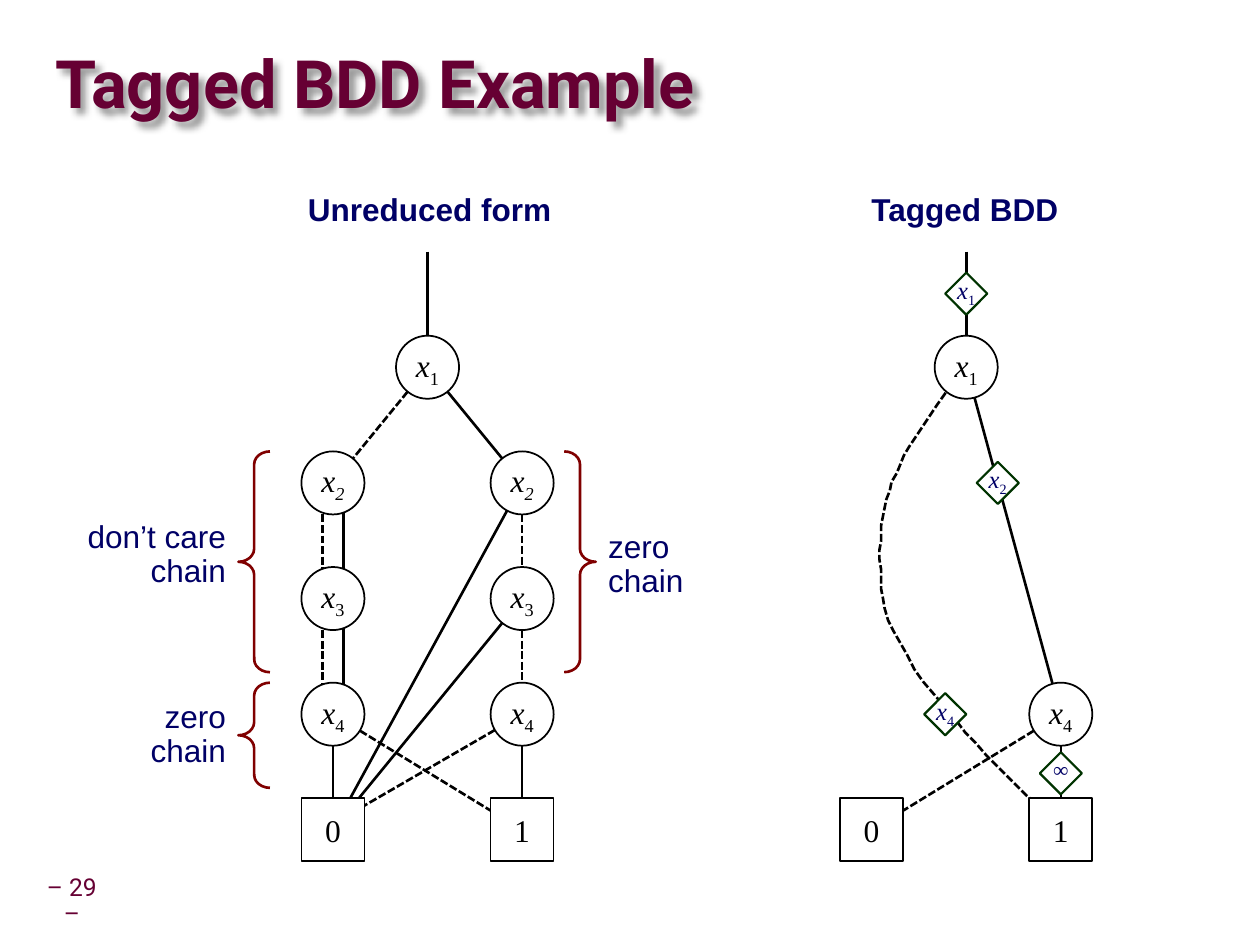
import lxml.etree
import pptx
import pptx.dml.color
import pptx.enum.dml
import pptx.enum.shapes
import pptx.enum.text
import pptx.oxml
import pptx.oxml.ns
import pptx.util

Pt = pptx.util.Pt
SHAPE = pptx.enum.shapes.MSO_SHAPE
ALIGN = pptx.enum.text.PP_ALIGN
MIDDLE = pptx.enum.text.MSO_ANCHOR.MIDDLE
TOP = pptx.enum.text.MSO_ANCHOR.TOP

COLORS = {
    "white": "FFFFFF",
    "black": "000000",
    "navy": "000066",
    "maroon": "660033",
    "brace": "800000",
    "tag": "003300",
}
NODE_FONT = {"name": "Times New Roman", "size": Pt(18)}
TAG_FONT = {"name": "Times New Roman", "size": Pt(14)}
LABEL_FONT = {"name": "Arial", "size": Pt(18)}
HEADING_FONT = {**LABEL_FONT, "bold": True}
TITLE_FONT = {"name": "Roboto", "size": Pt(38), "bold": True}
NUMBER_FONT = {"name": "Roboto", "size": Pt(14)}

NODE_SIZE, TAG_SIZE = 36, 24
LEVELS = [209.6 + 66 * level for level in range(5)]
X1, X2, X3, X4, LEAF = LEVELS
ROOT_TOP = 143.6


def rgb(color):
    return pptx.dml.color.RGBColor.from_string(COLORS[color])


def set_values(target, values):
    for name, value in values.items():
        setattr(target, name, value)


def bezier(start, first, second, end, steps=24):
    for step in range(1, steps + 1):
        t = step / steps
        weights = ((1 - t) ** 3, 3 * t * (1 - t) ** 2, 3 * t * t * (1 - t), t ** 3)
        corners = (start, first, second, end)
        yield tuple(round(sum(w * c[axis] for w, c in zip(weights, corners)), 2)
                    for axis in (0, 1))


class DiagramSlide:
    def __init__(self, slide):
        self.slide = slide

    def style_line(self, line, color="black", width=1.5, dashed=False):
        line.color.rgb = rgb(color)
        line.width = Pt(width)
        if dashed:
            line.dash_style = pptx.enum.dml.MSO_LINE.SQUARE_DOT

    def add_lines(self, shape, lines, font, color, align, spacing=0.9, frame=None):
        text_frame = shape.text_frame
        set_values(text_frame, {"word_wrap": False, **(frame or {})})
        for index, parts in enumerate(lines):
            paragraph = text_frame.paragraphs[0] if index == 0 else text_frame.add_paragraph()
            set_values(paragraph, {"alignment": align, "line_spacing": spacing})
            for text, italic, subscript in parts:
                run = paragraph.add_run()
                run.text = text
                set_values(run.font, {**font, "italic": italic})
                run.font.color.rgb = rgb(color)
                if subscript:
                    run._r.get_or_add_rPr().set("baseline", "-25000")

    def text(self, left, top, width, height, lines, font, color="navy",
             align=ALIGN.CENTER, spacing=0.9, **frame):
        shape = self.slide.shapes.add_textbox(Pt(left), Pt(top), Pt(width), Pt(height))
        parts = [[(line, False, False)] for line in lines]
        self.add_lines(shape, parts, font, color, align, spacing, {"vertical_anchor": TOP, **frame})
        return shape

    def title(self, text):
        shape = self.text(31.7, 19.4, 685.4, 61.2, [text], TITLE_FONT, "maroon", ALIGN.LEFT, 0.87,
                          vertical_anchor=MIDDLE, margin_left=0, margin_right=0,
                          margin_top=0, margin_bottom=0, word_wrap=True)
        shape._element.spPr.append(pptx.oxml.parse_xml(
            '<a:effectLst %s><a:outerShdw blurRad="50800" dist="53900" dir="2700000" algn="tl">'
            '<a:srgbClr val="%s"><a:alpha val="40000"/></a:srgbClr></a:outerShdw></a:effectLst>'
            % (pptx.oxml.ns.nsdecls("a"), COLORS["black"])))

    def edge(self, start, end, dashed=False):
        connector = self.slide.shapes.add_connector(
            pptx.enum.shapes.MSO_CONNECTOR.STRAIGHT, *(Pt(value) for value in (*start, *end)))
        self.style_line(connector.line, dashed=dashed)
        lxml.etree.SubElement(connector._element.spPr, pptx.oxml.ns.qn("a:effectLst"))

    def curve(self, start, *segments):
        points, current = [], start
        for segment in segments:
            points.extend(bezier(current, *segment))
            current = segment[-1]
        builder = self.slide.shapes.build_freeform(*start, scale=Pt(1))
        builder.add_line_segments(points, close=False)
        shape = builder.convert_to_shape()
        shape.shadow.inherit = False
        shape.fill.background()
        self.style_line(shape.line, dashed=True)

    def box(self, kind, center, size, line_color, line_width, parts, font, color, spacing, **frame):
        x, y = center
        shape = self.slide.shapes.add_shape(
            kind, Pt(x - size / 2), Pt(y - size / 2), Pt(size), Pt(size))
        shape.shadow.inherit = False
        shape.fill.solid()
        shape.fill.fore_color.rgb = rgb("white")
        self.style_line(shape.line, line_color, line_width)
        self.add_lines(shape, [parts], font, color, ALIGN.CENTER, spacing,
                       {"vertical_anchor": MIDDLE, "margin_left": 0, "margin_right": 0, **frame})

    def node(self, x, y, index, italic_index=False):
        self.box(SHAPE.OVAL, (x, y), NODE_SIZE, "black", 1,
                 [("x", True, False), (index, italic_index, True)], NODE_FONT, "black", 1.0)

    def leaf(self, x, value):
        self.box(SHAPE.RECTANGLE, (x, LEAF), NODE_SIZE, "black", 1,
                 [(value, False, False)], NODE_FONT, "black", 1.0)

    def tag(self, x, y, index):
        if index == "∞":
            parts, font = [(index, True, False)], {**TAG_FONT, "size": Pt(12)}
        else:
            parts, font = [("x", True, False), (index, False, True)], TAG_FONT
        self.box(SHAPE.DIAMOND, (x, y), TAG_SIZE, "tag", 1.25, parts, font, "navy", 0.9,
                 margin_top=0, margin_bottom=Pt(3.6))

    def brace(self, kind, left, top, height):
        shape = self.slide.shapes.add_shape(kind, Pt(left), Pt(top), Pt(18), Pt(height))
        shape.shadow.inherit = False
        shape.adjustments[0] = 0.41
        shape.fill.background()
        self.style_line(shape.line, "brace")


def draw_unreduced(diagram):
    left, middle, right = 190.1, 244.1, 298.1
    for start, end, dashed in [
        ((middle, ROOT_TOP), (middle, X1), False),
        ((middle, X1), (left, X2), True),
        ((middle, X1), (right, X2), False),
        ((left - 6, X2), (left - 6, X4), True),
        ((left + 6, X2), (left + 6, X4), False),
        ((right, X2), (right, X4), True),
        ((right, X2), (left, LEAF), False),
        ((right, X3), (left, LEAF), False),
        ((left, X4), (left, LEAF), False),
        ((left, X4), (right, LEAF), True),
        ((right, X4), (left - 6, LEAF), True),
        ((right, X4), (right, LEAF), False),
    ]:
        diagram.edge(start, end, dashed)
    diagram.node(middle, X1, "1")
    for x, value in ((left, "0"), (right, "1")):
        for y, index in ((X2, "2"), (X3, "3"), (X4, "4")):
            diagram.node(x, y, index, italic_index=index == "2")
        diagram.leaf(x, value)
    diagram.brace(SHAPE.RIGHT_BRACE, 322.1, 257.6, 126)
    diagram.brace(SHAPE.LEFT_BRACE, 136.1, 257.6, 126)
    diagram.brace(SHAPE.LEFT_BRACE, 136.1, 389.6, 60)
    diagram.text(340.1, 299.6, 58.3, 46.8, ["zero", "chain"], LABEL_FONT, align=ALIGN.LEFT)
    diagram.text(41.8, 293.8, 94.3, 46.8, ["don’t care", "chain"], LABEL_FONT, align=ALIGN.RIGHT)
    diagram.text(77.8, 396.7, 58.3, 46.8, ["zero", "chain"], LABEL_FONT, align=ALIGN.RIGHT)
    diagram.text(167.8, 107.3, 154.8, 27.4, ["Unreduced form"], HEADING_FONT)


def draw_tagged(diagram):
    left, middle, right = 497.6, 551.6, 605.6
    diagram.edge((middle, ROOT_TOP), (middle, X1))
    diagram.edge((middle, X1), (right, X4))
    diagram.edge((right, X4), (right, LEAF))
    diagram.edge((right, X4), (left, LEAF), dashed=True)
    diagram.curve((551, 210.2),
                  ((503.3, 269.3), (499, 294.5), (504, 341.3)),
                  ((509.8, 388.1), (right, 472.3), (right, 472.3)))
    diagram.node(middle, X1, "1")
    diagram.node(right, X4, "4")
    diagram.leaf(left, "0")
    diagram.leaf(right, "1")
    for x, y, index in ((middle, 167.6, "1"), (569.6, X2, "2"), (539.6, X4, "4"), (right, 441.3, "∞")):
        diagram.tag(x, y, index)
    diagram.text(489.6, 107.3, 122.4, 27.4, ["Tagged BDD"], HEADING_FONT)


def main():
    presentation = pptx.Presentation()
    presentation.slide_width, presentation.slide_height = Pt(719.3), Pt(539.3)
    diagram = DiagramSlide(presentation.slides.add_slide(presentation.slide_layouts[6]))
    diagram.title("Tagged BDD Example")
    draw_unreduced(diagram)
    draw_tagged(diagram)
    diagram.text(17.3, 503.3, 47.5, 22.3, ["– 29 –"], NUMBER_FONT, "maroon",
                 vertical_anchor=MIDDLE, word_wrap=True)
    presentation.save("out.pptx")


if __name__ == "__main__":
    main()
